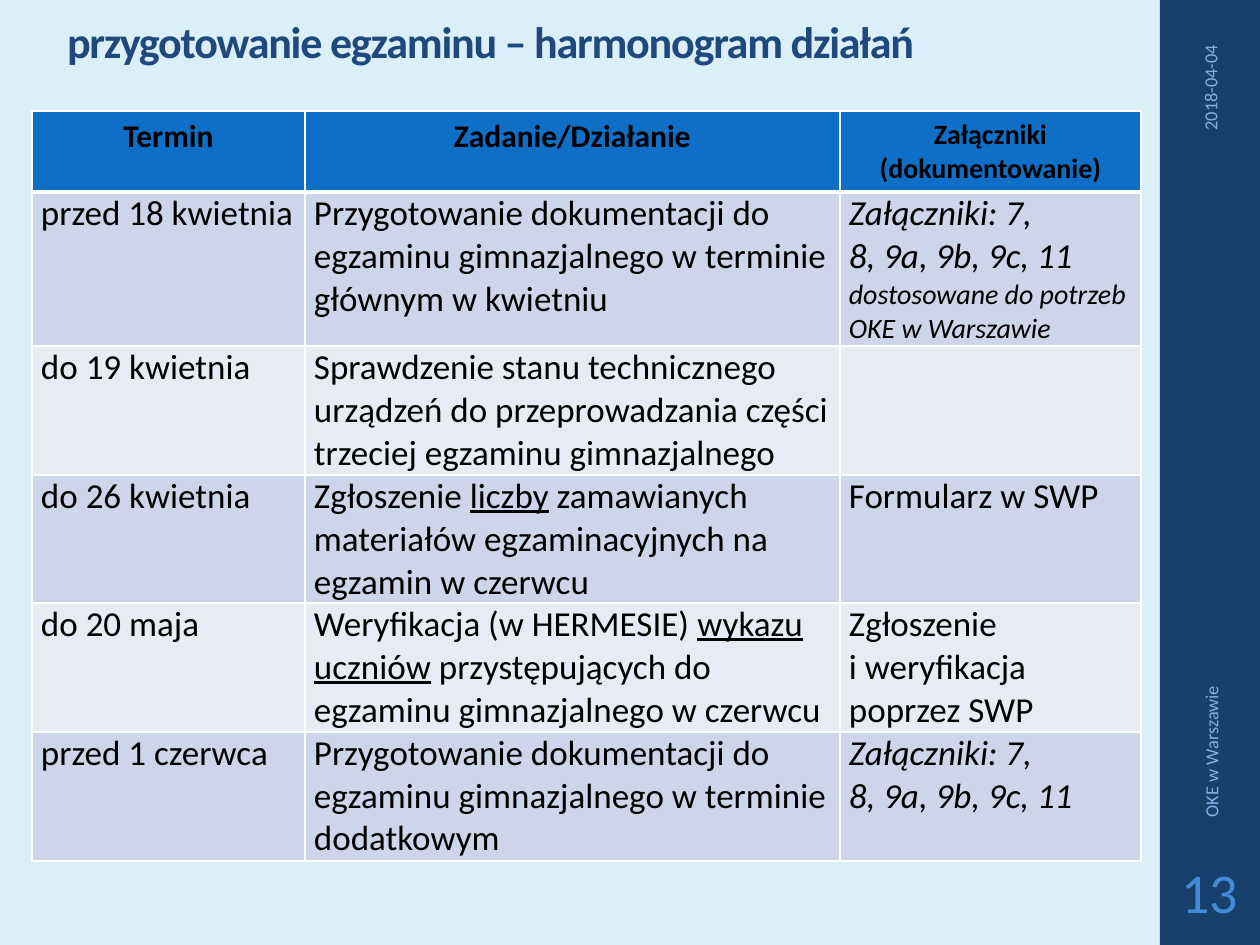
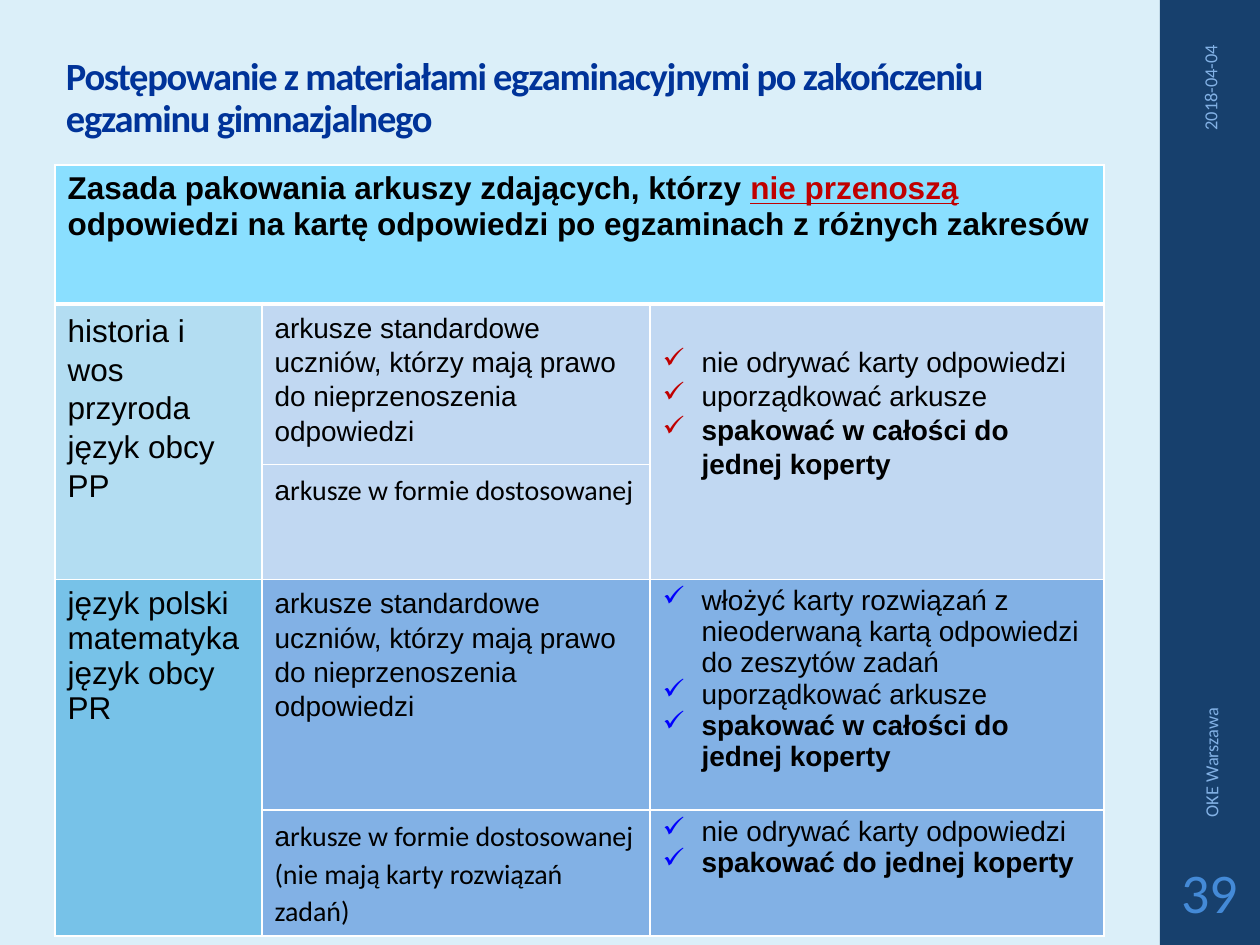
"""Builds two slides on running and closing the lower secondary school exam."""
from lxml.etree import SubElement
from pptx import Presentation
from pptx.dml.color import RGBColor
from pptx.enum.shapes import MSO_SHAPE as SHAPE
from pptx.enum.text import MSO_ANCHOR as ANCHOR, PP_ALIGN as ALIGN
from pptx.oxml.ns import qn
from pptx.util import Pt

SCALE = 914400 / 126
W, H = 1260, 945
COLORS = dict(
    page="DBEFF9", band="17406D", footer="82B1E5", number="448AD7", white="FFFFFF", black="000000",
    title="1F497D", title_alt="003399", head="0F6FC6", odd="CCD5EA", even="E7EBF5",
    rule="8ADFFF", subject_a="B3DDF2", pack_a="C1D8F2", subject_b="77C2E8", pack_b="82B1E5",
    red="C00000", blue="0000FF",
)

ITALIC, UNDER, BOLD = dict(italic=True), dict(underline=True), dict(bold=True)
CALIBRI = dict(font="Calibri")
ATTACHMENTS = [("Załączniki: 7,", ITALIC), ("8, 9a, 9b, 9c, 11", ITALIC)]

SCHEDULE_HEAD = [
    (["Termin"], 18),
    (["Zadanie/Działanie"], 18),
    (["Załączniki", "(dokumentowanie)"], 16),
]
SCHEDULE = [
    ("przed 18 kwietnia",
     "Przygotowanie dokumentacji do egzaminu gimnazjalnego w terminie głównym w kwietniu",
     ATTACHMENTS + [("dostosowane do potrzeb OKE w Warszawie", dict(italic=True, size=16))]),
    ("do 19 kwietnia",
     "Sprawdzenie stanu technicznego urządzeń do przeprowadzania części trzeciej egzaminu gimnazjalnego",
     []),
    ("do 26 kwietnia",
     ["Zgłoszenie ", ("liczby", UNDER), " zamawianych materiałów egzaminacyjnych na egzamin w czerwcu"],
     ["Formularz w SWP"]),
    ("do 20 maja",
     ["Weryfikacja (w HERMESIE) ", ("wykazu uczniów", UNDER),
      " przystępujących do egzaminu gimnazjalnego w czerwcu"],
     ["Zgłoszenie", "i weryfikacja poprzez SWP"]),
    ("przed 1 czerwca",
     "Przygotowanie dokumentacji do egzaminu gimnazjalnego w terminie dodatkowym",
     ATTACHMENTS),
]
SCHEDULE_COLS = [273, 535, 301]
SCHEDULE_ROWS = [81, 154, 129, 128, 129, 129]

STANDARD = ["arkusze standardowe uczniów, którzy mają prawo do nieprzenoszenia odpowiedzi"]
ADAPTED = "rkusze w formie dostosowanej"
LOOSE = dict(size=16, line=1.1)
RED_TICKS = dict(size=16, line=1.1, bullet="red")
BLUE_TICKS = dict(size=16, bullet="blue")
PACKING = [
    (0, 0, 1, 3, "rule", dict(size=18, bold=True),
     [["Zasada pakowania arkuszy zdających, którzy ",
       ("nie przenoszą ", dict(underline=True, color="red")),
       "odpowiedzi na kartę odpowiedzi po egzaminach z różnych zakresów"]]),
    (1, 0, 2, 1, "subject_a", dict(size=18, line=1.1), ["historia i wos", "przyroda", "język obcy PP"]),
    (1, 1, 1, 1, "pack_a", LOOSE, STANDARD),
    (1, 2, 2, 1, "pack_a", RED_TICKS,
     ["nie odrywać karty odpowiedzi", "uporządkować arkusze",
      ("spakować w całości do jednej koperty", BOLD)]),
    (2, 1, 1, 1, "pack_a", LOOSE, [["a", (ADAPTED, CALIBRI)]]),
    (3, 0, 2, 1, "subject_b", dict(size=18), ["język polski", "matematyka", "język obcy PR"]),
    (3, 1, 1, 1, "pack_b", LOOSE, STANDARD),
    (3, 2, 1, 1, "pack_b", BLUE_TICKS,
     ["włożyć karty rozwiązań z nieoderwaną kartą odpowiedzi do zeszytów zadań",
      "uporządkować arkusze", ("spakować w całości do jednej koperty", BOLD)]),
    (4, 1, 1, 1, "pack_b", LOOSE, [["a", (ADAPTED + " (nie mają karty rozwiązań zadań)", CALIBRI)]]),
    (4, 2, 1, 1, "pack_b", BLUE_TICKS,
     ["nie odrywać karty odpowiedzi", ("spakować do jednej koperty", BOLD)]),
]
PACKING_COLS = [207, 388, 454]
PACKING_ROWS = [139, 150, 115, 231, 126]
TICKS_TOP = 40


def px(n):
    return round(n * SCALE)


def rgb(name):
    return RGBColor.from_string(COLORS[name])


def style_run(r, size=18, font="Calibri", color="black", bold=False, italic=False,
              underline=False, spacing=None):
    f = r.font
    f.size, f.name, f.bold, f.italic, f.underline = Pt(size), font, bold, italic, underline
    f.color.rgb = rgb(color)
    if spacing:
        r._r.get_or_add_rPr().set("spc", str(spacing))


def add_bullet(p, color):
    pPr = p._p.get_or_add_pPr()
    pPr.set("marL", str(px(39)))
    pPr.set("indent", str(-px(39)))
    SubElement(SubElement(pPr, qn("a:buClr")), qn("a:srgbClr"), val=COLORS[color])
    SubElement(pPr, qn("a:buChar"), char="✓")


def write(tf, paragraphs, align=ALIGN.LEFT, line=1.0, bullet=None, **fmt):
    """Fills a frame; a paragraph is one run or a list of runs, a run is text or (text, format)."""
    tf.word_wrap = True
    for i, runs in enumerate(paragraphs):
        p = tf.add_paragraph() if i else tf.paragraphs[0]
        p.alignment, p.line_spacing = align, line
        if bullet:
            add_bullet(p, bullet)
        for run in runs if isinstance(runs, list) else [runs]:
            text, own = run if isinstance(run, tuple) else (run, {})
            if text == "\n":
                p.add_line_break()
                continue
            r = p.add_run()
            r.text = text
            style_run(r, **{**fmt, **own})


def add_text(s, box, paragraphs, anchor=ANCHOR.MIDDLE, rotation=0, inset=13, **fmt):
    sp = s.shapes.add_textbox(*map(px, box))
    sp.rotation = rotation
    tf = sp.text_frame
    tf.vertical_anchor = anchor
    tf.margin_left = tf.margin_right = px(inset)
    write(tf, paragraphs, **fmt)


def add_table(s, left, top, cols, rows):
    table = s.shapes.add_table(len(rows), len(cols), px(left), px(top),
                               px(sum(cols)), px(sum(rows))).table
    for col, width in zip(table.columns, cols):
        col.width = px(width)
    for row, height in zip(table.rows, rows):
        row.height = px(height)
    for r in range(len(rows)):
        for c in range(len(cols)):
            add_borders(table.cell(r, c), top=3 if r == 1 else 1, bottom=1 if r else 3)
    return table


def add_borders(cell, top, bottom):
    tcPr = cell._tc.get_or_add_tcPr()
    for side, width in (("L", 1), ("R", 1), ("T", top), ("B", bottom)):
        ln = SubElement(tcPr, qn("a:ln" + side), w=str(Pt(width)))
        SubElement(SubElement(ln, qn("a:solidFill")), qn("a:srgbClr"), val=COLORS["white"])


def fill_cell(cell, color, paragraphs, **fmt):
    cell.fill.solid()
    cell.fill.fore_color.rgb = rgb(color)
    write(cell.text_frame, paragraphs, **fmt)


def new_slide(prs, title, title_box, title_size, title_color, office, number):
    s = prs.slides.add_slide(prs.slide_layouts[6])
    band = s.shapes.add_shape(SHAPE.RECTANGLE, px(1160), 0, px(W - 1160), px(H))
    band.shadow.inherit = False
    band.fill.solid()
    band.fill.fore_color.rgb = rgb("band")
    band.line.fill.background()
    add_text(s, title_box, [title], anchor=ANCHOR.BOTTOM, line=0.9, size=title_size,
             color=title_color, bold=True, spacing=-70)
    footer = dict(rotation=270, size=10.5, color="footer")
    add_text(s, (1079, 144, 262, 38), ["2018-04-04"], align=ALIGN.RIGHT, **footer)
    add_text(s, (964, 564, 494, 38), [office], **footer)
    add_text(s, (1163, 850, 94, 82), [number], align=ALIGN.CENTER, inset=4, size=32, color="number")
    return s


def build_schedule(prs):
    s = new_slide(prs, "przygotowanie egzaminu – harmonogram działań", (54, 32, 1017, 42),
                  25.2, "title", "OKE w Warszawie", "13")
    table = add_table(s, 32, 111, SCHEDULE_COLS, SCHEDULE_ROWS)
    for c, (lines, size) in enumerate(SCHEDULE_HEAD):
        fill_cell(table.cell(0, c), "head", lines, size=size, bold=True, align=ALIGN.CENTER)
    for r, (term, task, files) in enumerate(SCHEDULE, 1):
        for c, paragraphs in enumerate(([term], [task], files)):
            cell = table.cell(r, c)
            cell.margin_left = cell.margin_right = px(9)
            cell.margin_top = cell.margin_bottom = 0
            fill_cell(cell, "odd" if r % 2 else "even", paragraphs, size=20)


def build_packing(prs):
    title = ["Postępowanie z materiałami egzaminacyjnymi po zakończeniu", "\n", "egzaminu gimnazjalnego"]
    s = new_slide(prs, title, (53, 50, 1080, 97), 22, "title_alt", "OKE Warszawa", "39")
    table = add_table(s, 55, 165, PACKING_COLS, PACKING_ROWS)
    for r, c, down, across, color, fmt, paragraphs in PACKING:
        cell = table.cell(r, c)
        if down * across > 1:
            cell.merge(table.cell(r + down - 1, c + across - 1))
        if fmt is RED_TICKS:
            cell.margin_top = px(TICKS_TOP)
        fill_cell(cell, color, paragraphs, font="Arial", **fmt)


def main():
    prs = Presentation()
    prs.slide_width, prs.slide_height = px(W), px(H)
    background = prs.slide_master.background.fill
    background.solid()
    background.fore_color.rgb = rgb("page")
    build_schedule(prs)
    build_packing(prs)
    prs.save("out.pptx")


if __name__ == "__main__":
    main()
